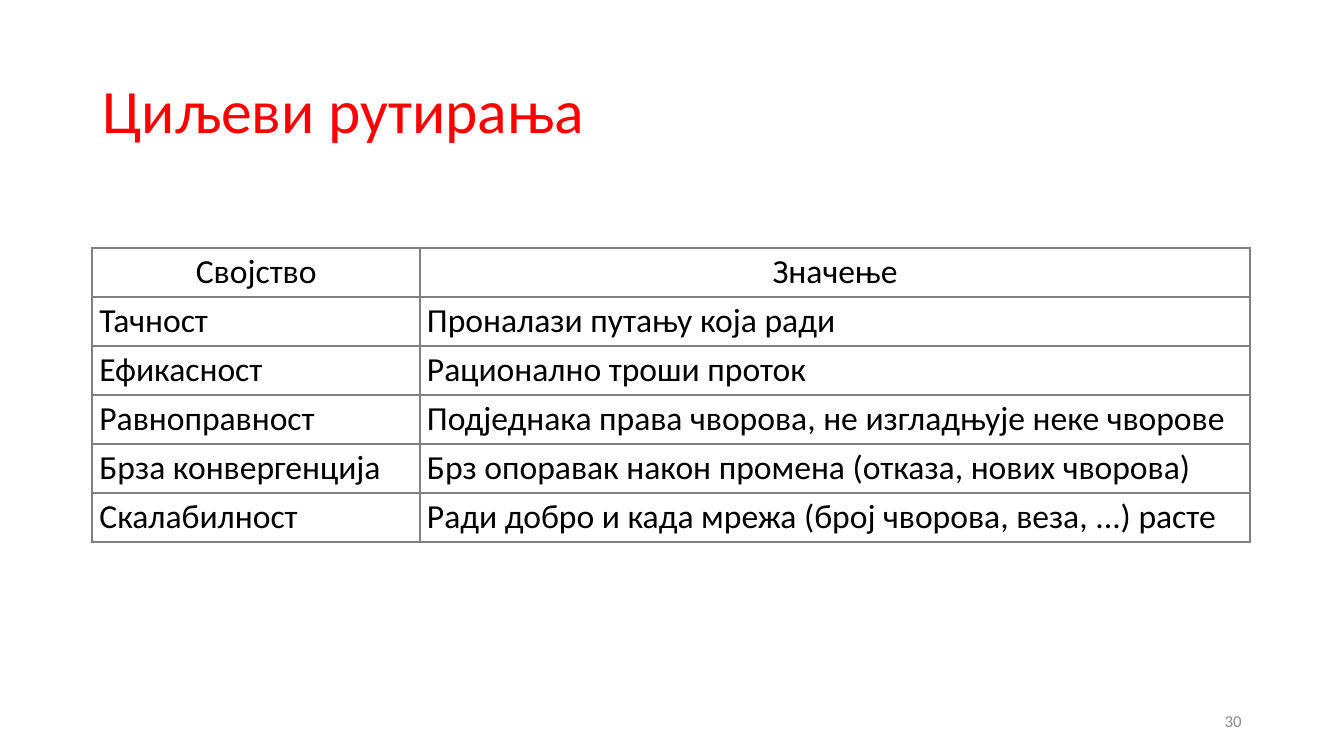
from lxml import etree
from pptx import Presentation
from pptx.dml.color import RGBColor
from pptx.enum.text import MSO_ANCHOR, PP_ALIGN
from pptx.oxml.ns import qn
from pptx.util import Pt

LEFT, CENTER, RIGHT = PP_ALIGN.LEFT, PP_ALIGN.CENTER, PP_ALIGN.RIGHT
MIDDLE = MSO_ANCHOR.MIDDLE
TITLE_ONLY = 5

RED = RGBColor(0xFF, 0x00, 0x00)
BLACK = RGBColor(0x00, 0x00, 0x00)
WHITE = RGBColor(0xFF, 0xFF, 0xFF)
BORDER_GRAY = RGBColor(0x80, 0x80, 0x80)
NUMBER_GRAY = RGBColor(0x8C, 0x8C, 0x8C)

ROUTING_GOALS = [
    ("Својство", "Значење"),
    ("Тачност", "Проналази путању која ради"),
    ("Ефикасност", "Рационално троши проток"),
    ("Равноправност", "Подједнака права чворова, не изгладњује неке чворове"),
    ("Брза конвергенција", "Брз опоравак након промена (отказа, нових чворова)"),
    ("Скалабилност", "Ради добро и када мрежа (број чворова, веза, ...) расте"),
]


class SlideBuilder:
    font_name = "Calibri"
    border_width = Pt(1.5)

    def __init__(self, slide):
        self.slide = slide

    def set_text(self, text_frame, text, size, color, alignment=LEFT):
        text_frame.text = text
        paragraph = text_frame.paragraphs[0]
        paragraph.alignment = alignment
        font = paragraph.runs[0].font
        font.name = self.font_name
        font.size = Pt(size)
        font.color.rgb = color
        return paragraph

    def title(self, text, left, top, width, height):
        shape = self.slide.shapes.title
        shape.left, shape.top = Pt(left), Pt(top)
        shape.width, shape.height = Pt(width), Pt(height)
        shape.text_frame.vertical_anchor = MIDDLE
        self.set_text(shape.text_frame, text, 44, RED).line_spacing = 0.9

    def slide_number(self, text, left, top, width, height):
        box = self.slide.shapes.add_textbox(Pt(left), Pt(top), Pt(width), Pt(height))
        box.text_frame.word_wrap = True
        box.text_frame.vertical_anchor = MIDDLE
        self.set_text(box.text_frame, text, 12, NUMBER_GRAY, RIGHT)

    def table(self, rows, left, top, column_widths, row_height):
        """Draw a bordered table whose first row is a centred header."""
        frame = self.slide.shapes.add_table(
            len(rows), len(column_widths), Pt(left), Pt(top),
            Pt(sum(column_widths)), Pt(row_height * len(rows)))
        table = frame.table
        table.first_row = table.horz_banding = False
        for column, width in zip(table.columns, column_widths):
            column.width = Pt(width)
        for row_index, texts in enumerate(rows):
            alignment, margin = (LEFT, 5) if row_index else (CENTER, 10)
            for column_index, text in enumerate(texts):
                cell = table.cell(row_index, column_index)
                cell.margin_left = cell.margin_right = Pt(margin)
                cell.margin_top = cell.margin_bottom = Pt(2.88)
                cell.fill.solid()
                cell.fill.fore_color.rgb = WHITE
                self.set_text(cell.text_frame, text, 24, BLACK, alignment)
                self.borders(cell)

    def borders(self, cell):
        properties = cell._tc.get_or_add_tcPr()
        for position, side in enumerate(("a:lnL", "a:lnR", "a:lnT", "a:lnB")):
            line = etree.Element(qn(side), w=str(self.border_width))
            fill = etree.SubElement(line, qn("a:solidFill"))
            etree.SubElement(fill, qn("a:srgbClr"), val=str(BORDER_GRAY))
            properties.insert(position, line)


def main():
    presentation = Presentation()
    presentation.slide_width, presentation.slide_height = Pt(960), Pt(540)
    slide = presentation.slides.add_slide(presentation.slide_layouts[TITLE_ONLY])
    builder = SlideBuilder(slide)
    builder.title("Циљеви рутирања", 66, 28.75, 828, 104.4)
    builder.table(ROUTING_GOALS, 66, 177, (234, 593), 34.6)
    builder.slide_number("30", 678, 500.5, 216, 28.75)
    presentation.save("out.pptx")


if __name__ == "__main__":
    main()
